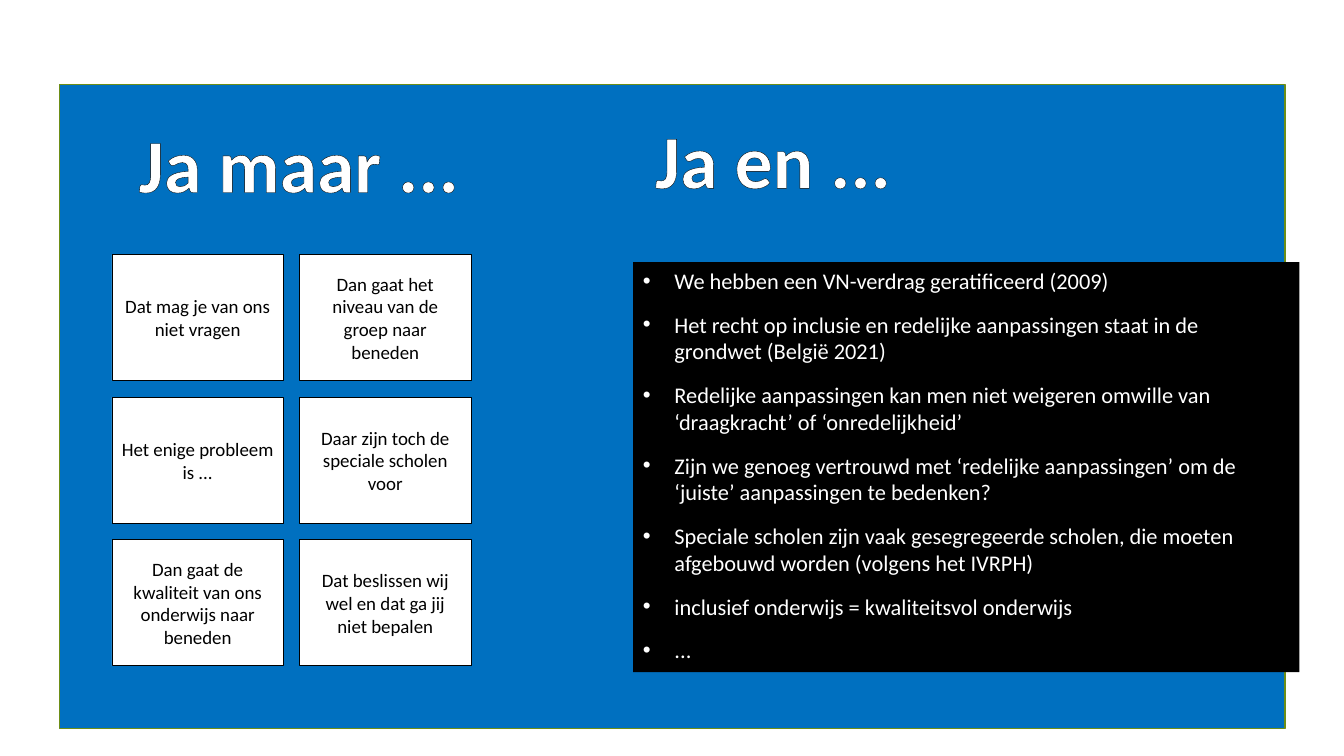
import pptx
import pptx.dml.color
import pptx.enum.shapes
import pptx.enum.text
import pptx.oxml
import pptx.oxml.ns
import pptx.util

Pt = pptx.util.Pt
RGBColor = pptx.dml.color.RGBColor
PP_ALIGN = pptx.enum.text.PP_ALIGN
MSO_ANCHOR = pptx.enum.text.MSO_ANCHOR
MSO_AUTO_SIZE = pptx.enum.text.MSO_AUTO_SIZE
RECTANGLE = pptx.enum.shapes.MSO_SHAPE.RECTANGLE

BLUE = RGBColor(0x00, 0x70, 0xC0)
OLIVE = RGBColor(0x6D, 0x8E, 0x17)
WHITE = RGBColor(0xFF, 0xFF, 0xFF)
BLACK = RGBColor(0x00, 0x00, 0x00)

OBJECTIONS = [
    ["Dat mag je van ons niet vragen", "Dan gaat het niveau van de groep naar beneden"],
    ["Het enige probleem is ...", "Daar zijn toch de speciale scholen voor"],
    ["Dan gaat de kwaliteit van ons onderwijs naar beneden",
     "Dat beslissen wij wel en dat ga jij niet bepalen"],
]
ANSWERS = [
    "We hebben een VN-verdrag geratificeerd (2009)",
    "Het recht op inclusie en redelijke aanpassingen staat in de grondwet (België 2021)",
    "Redelijke aanpassingen kan men niet weigeren omwille van ‘draagkracht’ of ‘onredelijkheid’",
    "Zijn we genoeg vertrouwd met ‘redelijke aanpassingen’ om de ‘juiste’ aanpassingen te bedenken?",
    "Speciale scholen zijn vaak gesegregeerde scholen, die moeten afgebouwd worden (volgens het IVRPH)",
    "inclusief onderwijs = kwaliteitsvol onderwijs",
    "...",
]


class SlideBuilder:
    """Holds the style and the current page; all lengths are in points."""

    font_name = "Calibri"

    def __init__(self, page):
        self.page = page

    def format_spans(self, para, size, color, bold=False):
        for span in para.runs:
            span.font.name = self.font_name
            span.font.size = Pt(size)
            span.font.bold = bold
            span.font.color.rgb = color

    def panel(self, left, top, width, height, fill, line=None, line_width=1):
        box = self.page.shapes.add_shape(
            RECTANGLE, Pt(left), Pt(top), Pt(width), Pt(height))
        box.shadow.inherit = False
        box.fill.solid()
        box.fill.fore_color.rgb = fill
        if line is None:
            box.line.fill.background()
        else:
            box.line.color.rgb = line
            box.line.width = Pt(line_width)
        return box

    def card(self, left, top, width, height, text):
        frame = self.panel(left, top, width, height, WHITE, BLACK, 0.5).text_frame
        frame.word_wrap = True
        frame.vertical_anchor = MSO_ANCHOR.MIDDLE
        frame.text = text
        para = frame.paragraphs[0]
        para.alignment = PP_ALIGN.CENTER
        self.format_spans(para, 13.5, BLACK)

    def heading(self, left, top, width, height, text):
        box = self.page.shapes.add_textbox(Pt(left), Pt(top), Pt(width), Pt(height))
        frame = box.text_frame
        frame.word_wrap = False
        frame.auto_size = MSO_AUTO_SIZE.SHAPE_TO_FIT_TEXT
        frame.text = text
        para = frame.paragraphs[0]
        para.alignment = PP_ALIGN.CENTER
        self.format_spans(para, 54, WHITE, bold=True)
        # Thin black outline around the letters
        outline = pptx.oxml.parse_xml(
            f'<a:ln {pptx.oxml.ns.nsdecls("a")} w="{Pt(1)}"><a:solidFill>'
            f'<a:srgbClr val="{BLACK}"/></a:solidFill></a:ln>')
        para.runs[0].font._element.insert(0, outline)

    def bullet_panel(self, left, top, width, height, lines):
        frame = self.panel(left, top, width, height, BLACK).text_frame
        frame.word_wrap = True
        frame.auto_size = MSO_AUTO_SIZE.SHAPE_TO_FIT_TEXT
        frame.vertical_anchor = MSO_ANCHOR.TOP
        frame.text = "\n".join(lines)
        for index, para in enumerate(frame.paragraphs):
            properties = para._p.get_or_add_pPr()
            properties.set("marL", str(Pt(22.5)))
            properties.set("indent", str(-Pt(22.5)))
            for tag, key, value in (("a:buFont", "typeface", "Arial"),
                                    ("a:buChar", "char", "•")):
                element = pptx.oxml.parse_xml(
                    f'<{tag} {pptx.oxml.ns.nsdecls("a")} {key}="{value}"/>')
                properties.append(element)
            para.alignment = PP_ALIGN.LEFT
            para.space_before = Pt(12 if index else 0)
            self.format_spans(para, 16, WHITE)


def main():
    deck = pptx.Presentation()
    deck.slide_width, deck.slide_height = Pt(960), Pt(540)
    builder = SlideBuilder(deck.slides.add_slide(deck.slide_layouts[6]))

    # Blue background panel
    builder.panel(42.5, 60.5, 875.5, 460, BLUE, OLIVE)

    # Left: grid of objections
    for row, texts in enumerate(OBJECTIONS):
        for column, text in enumerate(texts):
            builder.card(80 + 134 * column, 181.8 + 101.9 * row, 122.4, 90, text)
    builder.heading(90.7, 80, 257.8, 72.7, "Ja maar ... ")

    # Right: answers
    builder.bullet_panel(452.2, 187.2, 476, 293, ANSWERS)
    builder.heading(460, 77, 196.6, 72.7, "Ja en ... ")

    deck.save("out.pptx")


if __name__ == "__main__":
    main()
